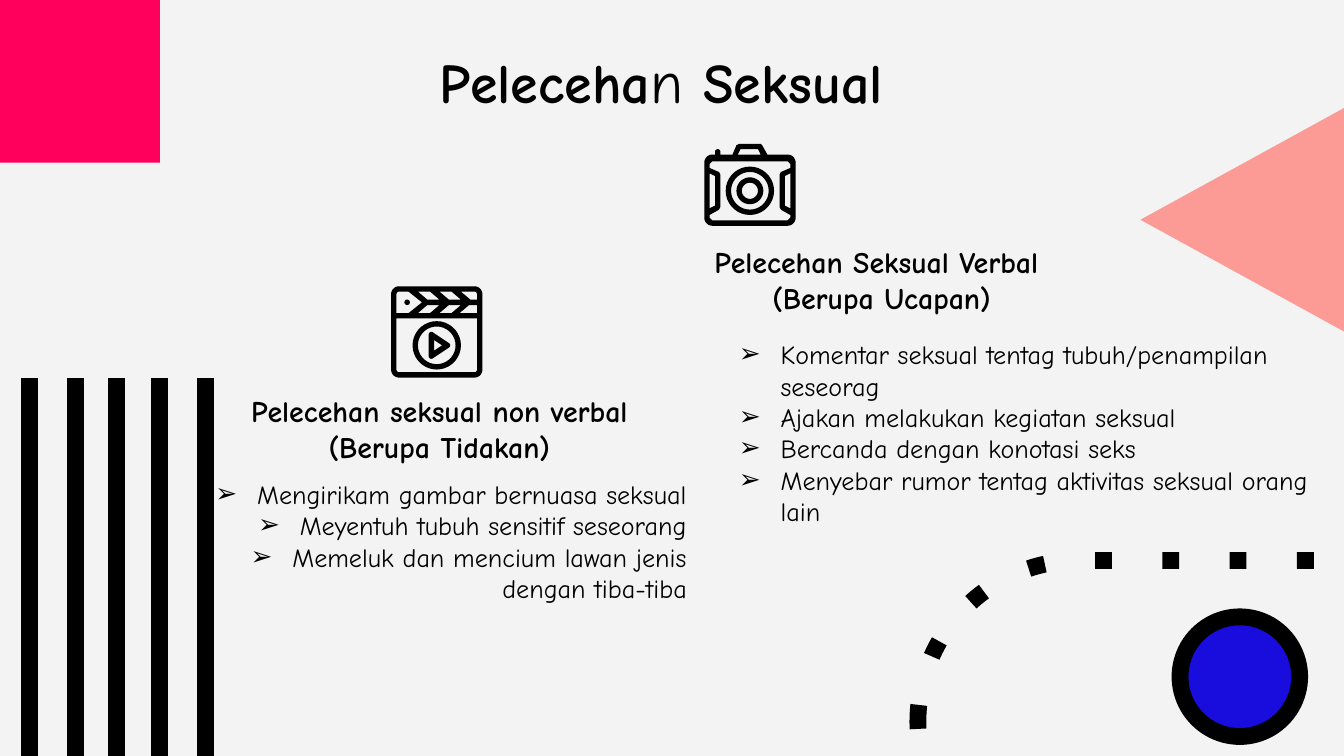
from math import cos, radians, sin
from typing import NamedTuple

from lxml.etree import SubElement
from pptx import Presentation
from pptx.dml.color import RGBColor
from pptx.enum.dml import MSO_LINE as Dash
from pptx.enum.shapes import MSO_CONNECTOR as Connector, MSO_SHAPE as Preset
from pptx.enum.text import MSO_ANCHOR as Anchor, MSO_AUTO_SIZE as AutoSize, PP_ALIGN as Align
from pptx.oxml.ns import qn
from pptx.util import Inches, Pt

COLORS = {"paper": "F3F3F3", "ink": "000000", "pink": "FF005C", "blue": "190DDE", "salmon": "FC9B96"}
FONT = "Comic Neue"
THICK = 9
Contour = list[tuple[float, float]]


class Box(NamedTuple):
    left: float
    top: float
    width: float
    height: float


class Span(NamedTuple):
    text: str
    size: float
    bold: bool = False


class Topic(NamedTuple):
    heading_box: Box
    heading: tuple[str, ...]
    list_box: Box
    align: Align
    points: tuple[str, ...]


TOPICS = [
    Topic(Box(1.7, 2.96, 3.14, 0.46), ("Pelecehan seksual non verbal (Berupa Tidakan)",),
          Box(1.29, 3.46, 3.92, 0.91), Align.RIGHT,
          ("Mengirikam gambar bernuasa seksual",
           "Meyentuh tubuh sensitif seseorang",
           "Memeluk dan mencium lawan jenis dengan tiba-tiba")),
    Topic(Box(4.61, 1.85, 3.9, 0.46), ("Pelecehan Seksual Verbal ", "(Berupa Ucapan)"),
          Box(5.4, 2.42, 4.58, 0.91), Align.LEFT,
          ("Komentar seksual tentag tubuh/penampilan seseorag",
           "Ajakan melakukan kegiatan seksual",
           "Bercanda dengan konotasi seks",
           "Menyebar rumor tentag aktivitas seksual orang lain")),
]


def color(name: str) -> RGBColor:
    return RGBColor.from_string(COLORS[name])


def style(shape, fill: str | None, weight: float = 0) -> None:
    shape.shadow.inherit = False
    if fill:
        shape.fill.solid()
        shape.fill.fore_color.rgb = color(fill)
    else:
        shape.fill.background()
    if weight:
        shape.line.color.rgb = color("ink")
        shape.line.width = Pt(weight)
    else:
        shape.line.fill.background()


def add_figure(slide, preset: Preset, box: Box, fill: str | None = None,
               weight: float = 0, rotation: float = 0):
    figure = slide.shapes.add_shape(preset, *map(Inches, box))
    figure.rotation = rotation
    style(figure, fill, weight)
    return figure


def add_stripe(slide, x: float) -> None:
    stripe = slide.shapes.add_connector(Connector.STRAIGHT, *map(Inches, (x, 5.83, x, 2.81)))
    stripe.line.color.rgb = color("ink")
    stripe.line.width = Pt(THICK)
    SubElement(stripe._element.spPr, qn("a:effectLst"))


def arc(x: float, y: float, radius: float, start: int, end: int) -> Contour:
    return [(x + radius * cos(radians(angle)), y + radius * sin(radians(angle)))
            for angle in range(start, end + 1, 10)]


def circle(x: float, y: float, radius: float) -> Contour:
    return arc(x, y, radius, 0, 350)


def add_outline(slide, *contours: Contour) -> None:
    scaled = [[(Inches(x), Inches(y)) for x, y in contour] for contour in contours]
    builder = slide.shapes.build_freeform(*scaled[0][0])
    builder.add_line_segments(scaled[0][1:], close=True)
    for contour in scaled[1:]:
        builder.move_to(*contour[0])
        builder.add_line_segments(contour[1:], close=True)
    style(builder.convert_to_shape(), "ink")


def add_span(paragraph, span: Span) -> None:
    run = paragraph.add_run()
    run.text = span.text
    run.font.name, run.font.size, run.font.bold = FONT, Pt(span.size), span.bold
    run.font.color.rgb = color("ink")


def prepare_text(shape, box: Box, anchor: Anchor):
    shape.left, shape.top, shape.width, shape.height = map(Inches, box)
    frame = shape.text_frame
    frame.word_wrap = True
    frame.auto_size = AutoSize.NONE
    frame.vertical_anchor = anchor
    frame.margin_left = frame.margin_right = frame.margin_top = frame.margin_bottom = Inches(0.1)
    return frame


def add_bullet(paragraph) -> None:
    props = paragraph._p.get_or_add_pPr()
    props.set("marL", str(Inches(0.31)))
    props.set("indent", str(-Inches(0.31)))
    SubElement(SubElement(props, qn("a:buClr")), qn("a:srgbClr"), val=COLORS["ink"])
    SubElement(props, qn("a:buFont"), typeface=FONT)
    SubElement(props, qn("a:buChar"), char="➢")


def add_title(slide) -> None:
    frame = prepare_text(slide.shapes.title, Box(0.7, 0.24, 8.44, 0.71), Anchor.MIDDLE)
    paragraph = frame.paragraphs[0]
    paragraph.alignment = Align.CENTER
    for span in (Span("Peleceha", 30, True), Span("n", 32), Span(" Seksual", 30, True)):
        add_span(paragraph, span)


def add_topic(slide, topic: Topic) -> None:
    heading_shape = slide.shapes.add_textbox(*map(Inches, topic.heading_box))
    heading = prepare_text(heading_shape, topic.heading_box, Anchor.MIDDLE).paragraphs[0]
    heading.alignment = Align.CENTER
    for index, text in enumerate(topic.heading):
        if index:
            heading.add_line_break()
        add_span(heading, Span(text, 16, True))
    list_shape = slide.shapes.add_textbox(*map(Inches, topic.list_box))
    frame = prepare_text(list_shape, topic.list_box, Anchor.TOP)
    for index, text in enumerate(topic.points):
        paragraph = frame.add_paragraph() if index else frame.paragraphs[0]
        paragraph.alignment = topic.align
        add_bullet(paragraph)
        add_span(paragraph, Span(text, 14))


def add_decoration(slide) -> None:
    for x in (1.53, 0.87, 0.22, 1.19, 0.56):
        add_stripe(slide, x)
    add_figure(slide, Preset.RECTANGLE, Box(-0.03, -0.01, 1.22, 1.22), "pink")
    arch = add_figure(slide, Preset.ROUND_2_SAME_RECTANGLE, Box(7.33, 3.67, 2.4, 3.4),
                      weight=THICK, rotation=270)
    arch.adjustments[0] = 0.5
    arch.line.dash_style = Dash.ROUND_DOT
    arch._element.spPr.find(".//" + qn("a:prstDash")).set("val", "dot")
    add_figure(slide, Preset.OVAL, Box(8.78, 4.59, 0.89, 0.89), "blue", THICK, 270)
    add_figure(slide, Preset.ISOSCELES_TRIANGLE, Box(8.38, 0.56, 2.36, 2.15), "salmon", rotation=270)


def add_clapperboard(slide) -> None:
    case = (arc(2.97, 2.19, 0.06, 180, 270) + arc(3.53, 2.19, 0.06, 270, 360)
            + arc(3.53, 2.75, 0.06, 0, 90) + arc(2.97, 2.75, 0.06, 90, 180))
    screen = [(2.95, 2.37), (3.55, 2.37), *arc(3.53, 2.75, 0.02, 0, 90), *arc(2.97, 2.75, 0.02, 90, 180)]
    hinge = [*arc(2.97, 2.19, 0.02, 180, 270), (3.04, 2.17), (3.14, 2.25), (3.04, 2.33), (2.95, 2.33)]
    upper = [[(x, 2.17), (x + 0.09, 2.17), (x + 0.16, 2.23), (x + 0.07, 2.23)] for x in (3.11, 3.27)]
    lower = [[(x, 2.33), (x + 0.09, 2.33), (x + 0.16, 2.27), (x + 0.07, 2.27)] for x in (3.11, 3.27)]
    upper_end = [(3.43, 2.17), *arc(3.53, 2.19, 0.02, 270, 360), (3.55, 2.23), (3.5, 2.23)]
    lower_end = [(3.42, 2.33), (3.49, 2.27), (3.55, 2.27), (3.55, 2.33)]
    add_outline(slide, case, screen, hinge, *upper, *lower, upper_end, lower_end)
    add_outline(slide, circle(3.03, 2.25, 0.02))
    play = [*arc(3.21, 2.49, 0.02, 180, 300), *arc(3.33, 2.57, 0.02, 300, 420), *arc(3.21, 2.65, 0.02, 60, 180)]
    add_outline(slide, play, [(3.23, 2.53), (3.29, 2.57), (3.23, 2.61)])
    add_outline(slide, circle(3.25, 2.57, 0.18), circle(3.25, 2.57, 0.14))


def add_camera(slide) -> None:
    center = 5.58

    def mirror(contour: Contour) -> Contour:
        return [(2 * center - x, y) for x, y in reversed(contour)]

    for radius in (0.18, 0.1):
        add_outline(slide, circle(center, 1.42, radius), circle(center, 1.42, radius - 0.04))
    body = [*arc(5.3, 1.21, 0.06, 180, 270), (5.32, 1.15), *arc(5.34, 1.13, 0.02, 180, 360),
            (5.36, 1.15), (5.45, 1.15), (5.48, 1.08), (5.5, 1.07), (5.66, 1.07), (5.67, 1.08),
            (5.71, 1.15), *arc(5.86, 1.21, 0.06, 270, 360), *arc(5.86, 1.62, 0.06, 0, 90),
            *arc(5.3, 1.62, 0.06, 90, 180)]
    bump = [(5.51, 1.11), (5.64, 1.11), (5.66, 1.15), (5.49, 1.15)]
    grip = [(5.88, 1.29), (5.88, 1.55), (5.84, 1.53), (5.84, 1.31)]
    panel = [(5.86, 1.2), (5.88, 1.22), (5.88, 1.25), (5.81, 1.28), (5.8, 1.3), (5.8, 1.54),
             (5.81, 1.56), (5.88, 1.6), (5.88, 1.62), (5.86, 1.64)]
    add_outline(slide, body, bump, grip, mirror(grip), panel + mirror(panel))


def main() -> None:
    deck = Presentation()
    deck.slide_width = Inches(10)
    deck.slide_height = deck.slide_width * 9 // 16
    slide = deck.slides.add_slide(deck.slide_layouts[5])
    slide.background.fill.solid()
    slide.background.fill.fore_color.rgb = color("paper")
    add_decoration(slide)
    add_title(slide)
    for topic in TOPICS:
        add_topic(slide, topic)
    add_clapperboard(slide)
    add_camera(slide)
    deck.save("out.pptx")


if __name__ == "__main__":
    main()
